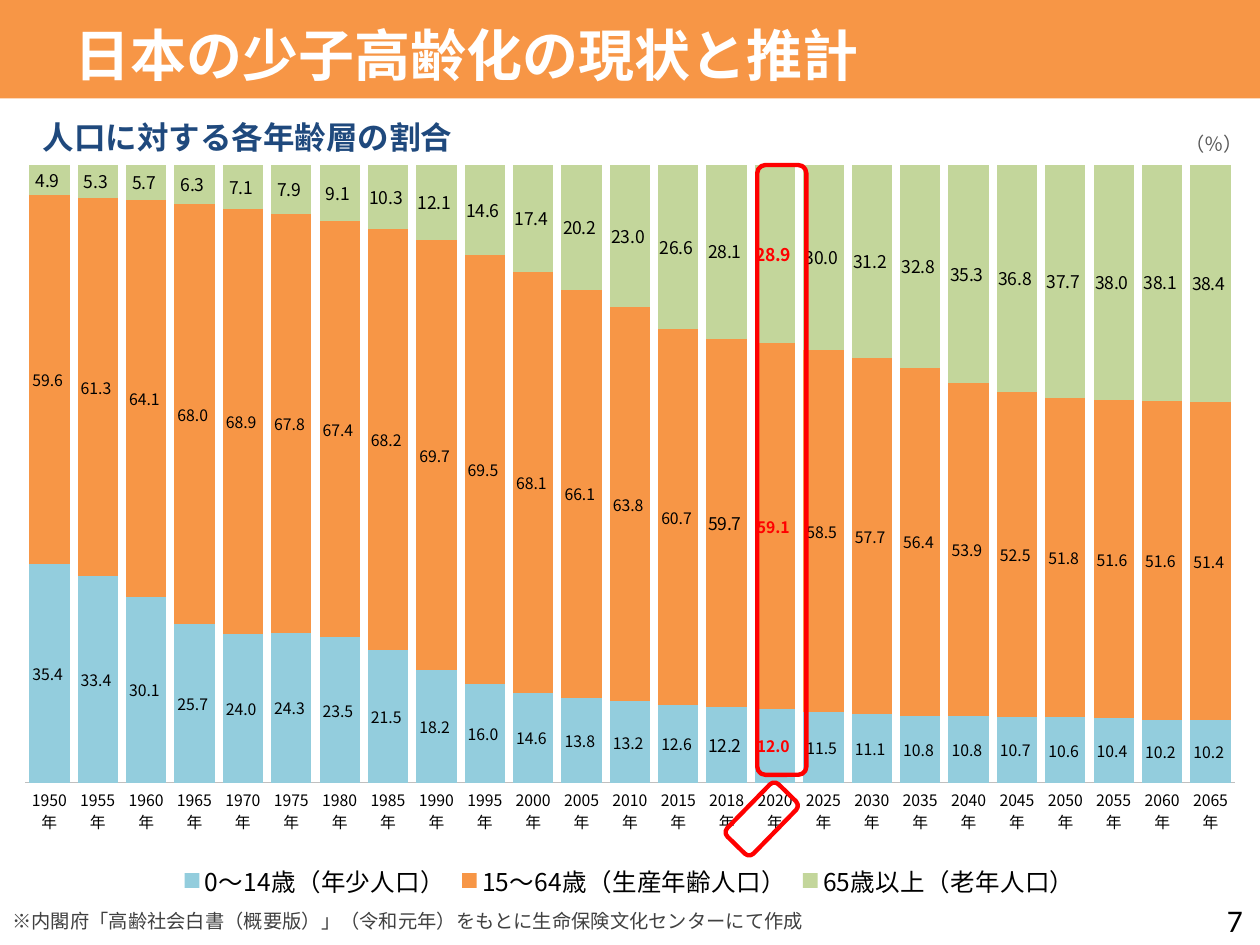
from lxml.etree import SubElement
from pptx import Presentation
from pptx.chart.data import CategoryChartData
from pptx.dml.color import RGBColor
from pptx.enum.chart import (XL_CHART_TYPE as ChartType, XL_LABEL_POSITION as LabelPosition,
                             XL_LEGEND_POSITION as LegendPosition, XL_TICK_MARK as TickMark)
from pptx.enum.shapes import MSO_SHAPE as Shape
from pptx.enum.text import MSO_ANCHOR as Anchor, PP_ALIGN as Align
from pptx.oxml.ns import qn
from pptx.util import Pt

JAPANESE, LATIN = "Noto Sans CJK JP", "Calibri"
ORANGE = RGBColor(0xF7, 0x96, 0x46)
BLUE = RGBColor(0x93, 0xCD, 0xDD)
GREEN = RGBColor(0xC3, 0xD6, 0x9B)
NAVY = RGBColor(0x1F, 0x49, 0x7D)
RED = RGBColor(0xFF, 0x00, 0x00)
BLACK = RGBColor(0x00, 0x00, 0x00)
WHITE = RGBColor(0xFF, 0xFF, 0xFF)
DARK_GRAY = RGBColor(0x40, 0x40, 0x40)
GRAY = RGBColor(0x59, 0x59, 0x59)
LIGHT_GRAY = RGBColor(0xBF, 0xBF, 0xBF)

# Content
TITLE = "日本の少子高齢化の現状と推計"
YEARS = [*range(1950, 2016, 5), 2018, *range(2020, 2066, 5)]
NUMBER_FORMAT = "0.0_ "
# name, colour, label size, values
AGE_GROUPS = [
    ("0～14歳（年少人口）", BLUE, 9,
     [35.4, 33.4, 30.1, 25.7, 24.0, 24.3, 23.5, 21.5, 18.2, 16.0, 14.6, 13.8, 13.2,
      12.6, 12.2, 12.0, 11.5, 11.1, 10.8, 10.8, 10.7, 10.6, 10.4, 10.2, 10.2]),
    ("15～64歳（生産年齢人口）", ORANGE, 9,
     [59.6, 61.3, 64.1, 68.0, 68.9, 67.8, 67.4, 68.2, 69.7, 69.5, 68.1, 66.1, 63.8,
      60.7, 59.7, 59.1, 58.5, 57.7, 56.4, 53.9, 52.5, 51.8, 51.6, 51.6, 51.4]),
    ("65歳以上（老年人口）", GREEN, 10,
     [4.9, 5.3, 5.7, 6.3, 7.1, 7.9, 9.1, 10.3, 12.1, 14.6, 17.4, 20.2, 23.0,
      26.6, 28.1, 28.9, 30.0, 31.2, 32.8, 35.3, 36.8, 37.7, 38.0, 38.1, 38.4]),
]
# text, box, size, colour, bold, font, alignment
TEXTS = [
    ("人口に対する各年齢層の割合", (17.3, 64, 337, 29), 18, NAVY, True, JAPANESE, Align.LEFT),
    ("※内閣府「高齢社会白書（概要版）」（令和元年）をもとに生命保険文化センターにて作成",
     (0, 516.2, 657.4, 21), 11, DARK_GRAY, False, JAPANESE, Align.LEFT),
    ("（％）", (670.3, 72, 49, 21), 11, GRAY, False, JAPANESE, Align.LEFT),
    ("7", (549.4, 511.2, 167.8, 28.8), 18, BLACK, False, LATIN, Align.RIGHT),
]
# box, rotation
HIGHLIGHTS = [((432.7, 94.3, 28.1, 348.5), 0), ((424.8, 447.1, 20.9, 41.8), 44.3)]
PLOT_AREA = {"x": 0.02, "y": 0.02, "w": 0.96, "h": 0.82}  # shares of the chart frame


def points(box):
    return [Pt(length) for length in box]


def set_font(font, size, color=BLACK, bold=False, name=JAPANESE):
    font.size, font.bold, font.name = Pt(size), bold, name
    font.color.rgb = color


def add_east_asian_fonts(element):
    for latin in list(element.iter(qn("a:latin"))):
        east_asian = SubElement(latin.getparent(), qn("a:ea"), typeface=latin.get("typeface"))
        latin.addnext(east_asian)


presentation = Presentation()
presentation.slide_width, presentation.slide_height = Pt(720), Pt(540)
slide = presentation.slides.add_slide(presentation.slide_layouts[5])

# Title on its band
title = slide.shapes.title
band = slide.shapes.add_shape(Shape.RECTANGLE, *points((0, 0, 720, 56.2)))
band.shadow.inherit = False
band.fill.solid()
band.fill.fore_color.rgb = ORANGE
band.line.fill.background()
title._element.addprevious(band._element)
title.left, title.top, title.width, title.height = points((35.3, 2.2, 532, 56.9))
title.text_frame.text = TITLE
title.text_frame.vertical_anchor = Anchor.MIDDLE
title.text_frame.paragraphs[0].alignment = Align.LEFT
set_font(title.text_frame.paragraphs[0].font, 32, WHITE, True)

# Chart
chart_data = CategoryChartData(number_format=NUMBER_FORMAT)
chart_data.categories = [f"{year}年" for year in YEARS]
for name, _, _, values in AGE_GROUPS:
    chart_data.add_series(name, values)
chart = slide.shapes.add_chart(ChartType.COLUMN_STACKED_100,
                               *points((0, 85.7, 720, 430.5)), chart_data).chart
set_font(chart.font, 10)
chart.has_title = False
chart.has_legend = True
chart.legend.position = LegendPosition.BOTTOM
chart.legend.include_in_layout = False
set_font(chart.legend.font, 14)

year_axis = chart.category_axis
year_axis.major_tick_mark = year_axis.minor_tick_mark = TickMark.NONE
year_axis.format.line.color.rgb = LIGHT_GRAY
year_axis.format.line.width = Pt(0.75)
set_font(year_axis.tick_labels.font, 9)
chart.value_axis.visible = False
chart.value_axis.has_major_gridlines = False
chart.value_axis.minimum_scale, chart.value_axis.maximum_scale = 0, 1

plot = chart.plots[0]
plot.gap_width, plot.overlap = 20, 100
for series, (_, color, label_size, _) in zip(plot.series, AGE_GROUPS):
    series.format.fill.solid()
    series.format.fill.fore_color.rgb = color
    labels = series.data_labels
    labels.show_value = True
    labels.position = LabelPosition.CENTER
    labels.number_format, labels.number_format_is_linked = NUMBER_FORMAT, False
    set_font(labels.font, label_size)
    # The latest years have their own label style
    for year, size, label_color, bold in ((2018, 10, BLACK, False),
                                          (2020, label_size, RED, True)):
        label = series.points[YEARS.index(year)].data_label
        set_font(label.font, size, label_color, bold)
        label.position = LabelPosition.CENTER

# Number format of single labels and size of the plot area
chart_space = chart._chartSpace
for index in chart_space.xpath(".//c:dLbl/c:idx"):
    index.addnext(SubElement(index.getparent(), qn("c:numFmt"),
                             formatCode=NUMBER_FORMAT, sourceLinked="0"))
plot_area = chart_space.xpath(".//c:plotArea")[0]
for old_layout in plot_area.findall(qn("c:layout")):
    plot_area.remove(old_layout)
layout = SubElement(plot_area, qn("c:layout"))
plot_area.insert(0, layout)
manual_layout = SubElement(layout, qn("c:manualLayout"))
SubElement(manual_layout, qn("c:layoutTarget"), val="inner")
for side in "xy":
    SubElement(manual_layout, qn(f"c:{side}Mode"), val="edge")
for side, share in PLOT_AREA.items():
    SubElement(manual_layout, qn(f"c:{side}"), val=str(share))

# Red frames around 2020
frames = slide.shapes.add_group_shape()
for box, rotation in HIGHLIGHTS:
    frame = frames.shapes.add_shape(Shape.ROUNDED_RECTANGLE, *points(box))
    frame.shadow.inherit = False
    frame.rotation = rotation
    frame.fill.background()
    frame.line.color.rgb = RED
    frame.line.width = Pt(2.5)

# Subtitle, source, unit and page number
for text, box, size, color, bold, font_name, alignment in TEXTS:
    text_frame = slide.shapes.add_textbox(*points(box)).text_frame
    text_frame.word_wrap = True
    text_frame.text = text
    paragraph = text_frame.paragraphs[0]
    paragraph.alignment = alignment
    set_font(paragraph.font, size, color, bold, font_name)

add_east_asian_fonts(slide.shapes._spTree)
add_east_asian_fonts(chart_space)
presentation.save("out.pptx")
